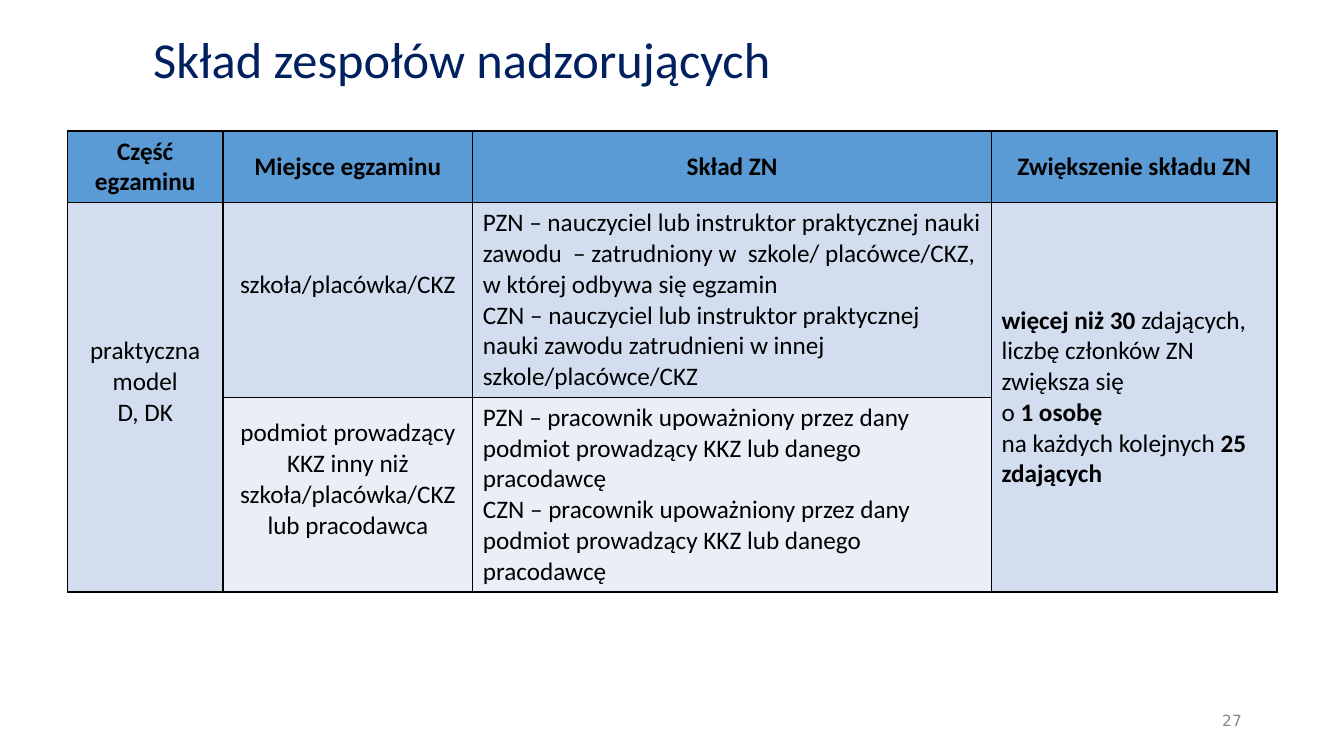
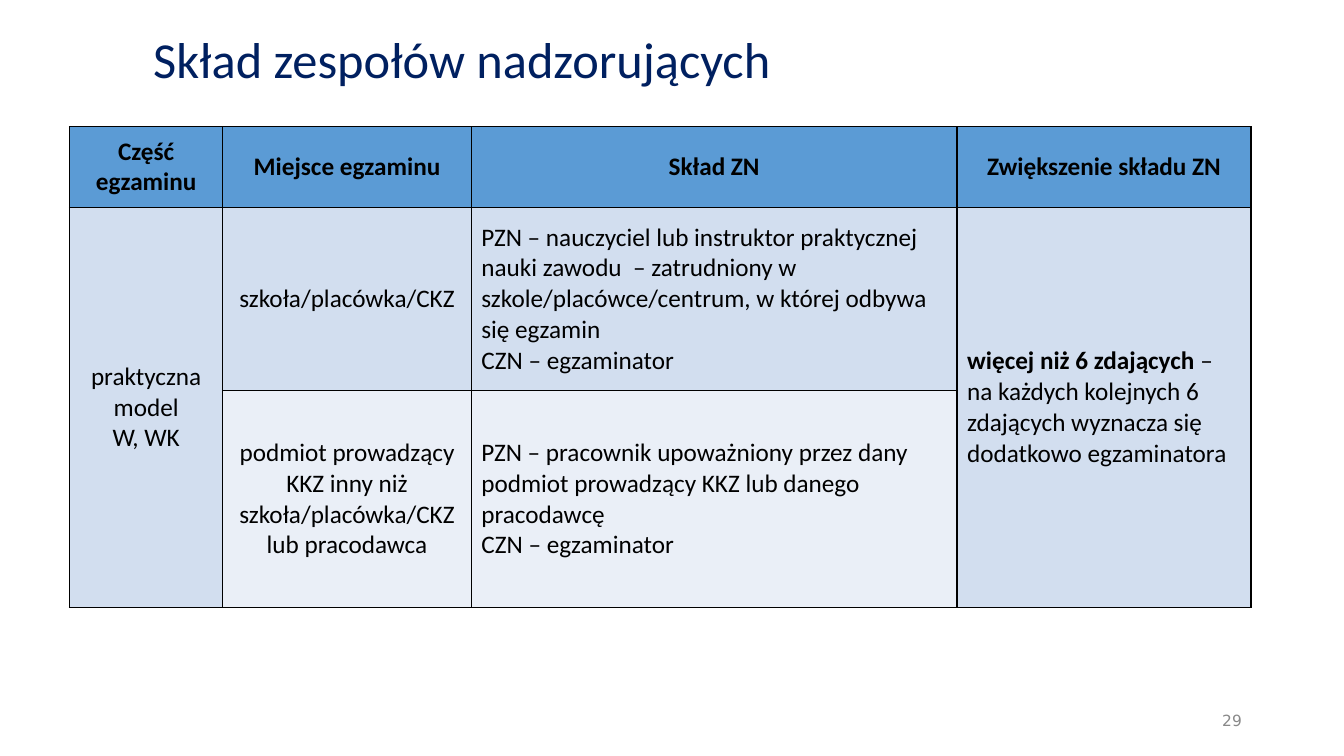
from dataclasses import dataclass

from lxml.etree import SubElement
from pptx import Presentation
from pptx.dml.color import RGBColor
from pptx.enum.text import MSO_ANCHOR as Anchor, MSO_AUTO_SIZE as AutoSize, PP_ALIGN as Align
from pptx.oxml import parse_xml
from pptx.oxml.ns import nsdecls, qn
from pptx.util import Pt


@dataclass(frozen=True)
class Theme:
    font: str = "Calibri"
    number_font: str = "DejaVu Sans"
    title_size: float = 36
    body_size: float = 18
    number_size: float = 11
    title: str = "002060"
    text: str = "000000"
    number: str = "898989"
    header_fill: str = "5B9BD5"
    row_fill: str = "D2DEEF"
    alternate_fill: str = "EAEFF7"
    border: str = "000000"
    border_width: float = 1


@dataclass(frozen=True)
class Box:
    left: float
    top: float
    width: float
    height: float

    def lengths(self):
        return [Pt(value) for value in (self.left, self.top, self.width, self.height)]


@dataclass(frozen=True)
class Team:
    number: str
    left: float
    top: float
    columns: tuple
    rows: tuple
    model: str
    school_staff: tuple
    provider_staff: tuple
    increase: str
    centred_lift: float = 0


THEME = Theme()
SLIDE_SIZE = (960, 540)
TITLE_BOX = Box(102.24, 24.5, 711.4, 39.6)
NUMBER_BOX = Box(678.2, 500.4, 216, 28.8)
CELL_MARGIN_X, CELL_MARGIN_Y = 7.2, 3.6
TITLE = "Skład zespołów nadzorujących"
HEADERS = ("Część egzaminu", "Miejsce egzaminu", "Skład ZN", "Zwiększenie składu ZN")
SCHOOL = "szkoła/placówka/CKZ"
PROVIDER = ("podmiot prowadzący KKZ inny niż szkoła/placówka/CKZ", "lub pracodawca")
AUTHORISED = "pracownik upoważniony przez dany podmiot prowadzący KKZ lub danego pracodawcę"
EXAMINER = "CZN – egzaminator"

TEAMS = (
    Team(
        number="27", left=48.24, top=93.6,
        columns=(111, 178.5, 370.5, 204), rows=(50.5, 139, 139),
        model="D, DK",
        school_staff=(
            "PZN – nauczyciel lub instruktor praktycznej nauki zawodu  – zatrudniony w  szkole/ "
            "placówce/CKZ, w której odbywa się egzamin",
            "CZN – nauczyciel lub instruktor praktycznej nauki zawodu zatrudnieni w innej "
            "szkole/placówce/CKZ",
        ),
        provider_staff=(f"PZN – {AUTHORISED}", f"CZN – {AUTHORISED}"),
        increase="*więcej niż 30 *zdających, liczbę członków ZN zwiększa się\v"
                 "o *1 osobę\v*na każdych kolejnych *25 zdających*",
        centred_lift=22,
    ),
    Team(
        number="29", left=49.68, top=90.5,
        columns=(109.5, 177.5, 347, 210), rows=(57.5, 131, 155),
        model="W, WK",
        school_staff=(
            "PZN – nauczyciel lub instruktor praktycznej nauki zawodu  – zatrudniony w "
            "szkole/placówce/centrum, w której odbywa się egzamin",
            EXAMINER,
        ),
        provider_staff=(f"PZN – {AUTHORISED}", EXAMINER),
        increase="*więcej niż 6 zdających *– na każdych kolejnych 6 zdających "
                 "wyznacza się dodatkowo egzaminatora",
    ),
)


def style_run(run, size, color, font=THEME.font, bold=False):
    run.font.name = font
    run.font.size = Pt(size)
    run.font.bold = bold
    run.font.color.rgb = RGBColor.from_string(color)


def write_marked(paragraph, text, bold):
    for index, part in enumerate(text.split("*")):
        for line_index, line in enumerate(part.split("\v")):
            if line_index:
                paragraph.add_line_break()
            if line:
                run = paragraph.add_run()
                run.text = line
                style_run(run, THEME.body_size, THEME.text, bold=bold or index % 2 == 1)


def draw_borders(cell):
    properties = cell._tc.get_or_add_tcPr()
    for position, side in enumerate(("lnL", "lnR", "lnT", "lnB")):
        line = parse_xml(f'<a:{side} {nsdecls("a")} w="{Pt(THEME.border_width)}"/>')
        fill = SubElement(line, qn("a:solidFill"))
        SubElement(fill, qn("a:srgbClr")).set("val", THEME.border)
        properties.insert(position, line)


def format_cell(cell, fill):
    cell.fill.solid()
    cell.fill.fore_color.rgb = RGBColor.from_string(fill)
    cell.vertical_anchor = Anchor.MIDDLE
    cell.margin_left = cell.margin_right = Pt(CELL_MARGIN_X)
    cell.margin_top = cell.margin_bottom = Pt(CELL_MARGIN_Y)
    draw_borders(cell)


def fill_cell(cell, lines, align=Align.LEFT, bold=False, lift=0):
    cell.margin_bottom = Pt(CELL_MARGIN_Y + lift)
    frame = cell.text_frame
    for index, line in enumerate(lines):
        paragraph = frame.add_paragraph() if index else frame.paragraphs[0]
        paragraph.alignment = align
        write_marked(paragraph, line, bold)


def add_title(slide, box):
    title = slide.shapes.title
    title.left, title.top, title.width, title.height = box.lengths()
    frame = title.text_frame
    frame.text = TITLE
    frame.auto_size = AutoSize.NONE
    frame.vertical_anchor = Anchor.MIDDLE
    paragraph = frame.paragraphs[0]
    paragraph.alignment = Align.LEFT
    paragraph.line_spacing = 0.9
    style_run(paragraph.runs[0], THEME.title_size, THEME.title)


def add_number(slide, box, number):
    frame = slide.shapes.add_textbox(*box.lengths()).text_frame
    frame.word_wrap = True
    frame.vertical_anchor = Anchor.MIDDLE
    frame.text = number
    paragraph = frame.paragraphs[0]
    paragraph.alignment = Align.RIGHT
    style_run(paragraph.runs[0], THEME.number_size, THEME.number, THEME.number_font)


def add_team_table(slide, box, team):
    table = slide.shapes.add_table(len(team.rows), len(team.columns), *box.lengths()).table
    for column, width in zip(table.columns, team.columns):
        column.width = Pt(width)
    fills = (THEME.header_fill, THEME.row_fill, THEME.alternate_fill)
    for row, height, fill in zip(table.rows, team.rows, fills):
        row.height = Pt(height)
        for cell in row.cells:
            format_cell(cell, fill)
    for column in (0, 3):
        format_merged = table.cell(1, column)
        format_merged.merge(table.cell(2, column))
    for column, header in enumerate(HEADERS):
        fill_cell(table.cell(0, column), (header,), Align.CENTER, bold=True)
    centred = {(1, 0): ("praktyczna", "model", team.model), (1, 1): (SCHOOL,), (2, 1): PROVIDER}
    for place, lines in centred.items():
        fill_cell(table.cell(*place), lines, Align.CENTER, lift=team.centred_lift)
    fill_cell(table.cell(1, 2), team.school_staff)
    fill_cell(table.cell(2, 2), team.provider_staff)
    fill_cell(table.cell(1, 3), (team.increase,))


def add_team_slide(presentation, team):
    slide = presentation.slides.add_slide(presentation.slide_layouts.get_by_name("Title Only"))
    add_title(slide, TITLE_BOX)
    add_team_table(slide, Box(team.left, team.top, sum(team.columns), sum(team.rows)), team)
    add_number(slide, NUMBER_BOX, team.number)


def main():
    presentation = Presentation()
    presentation.slide_width, presentation.slide_height = map(Pt, SLIDE_SIZE)
    for team in TEAMS:
        add_team_slide(presentation, team)
    presentation.save("out.pptx")


if __name__ == "__main__":
    main()
